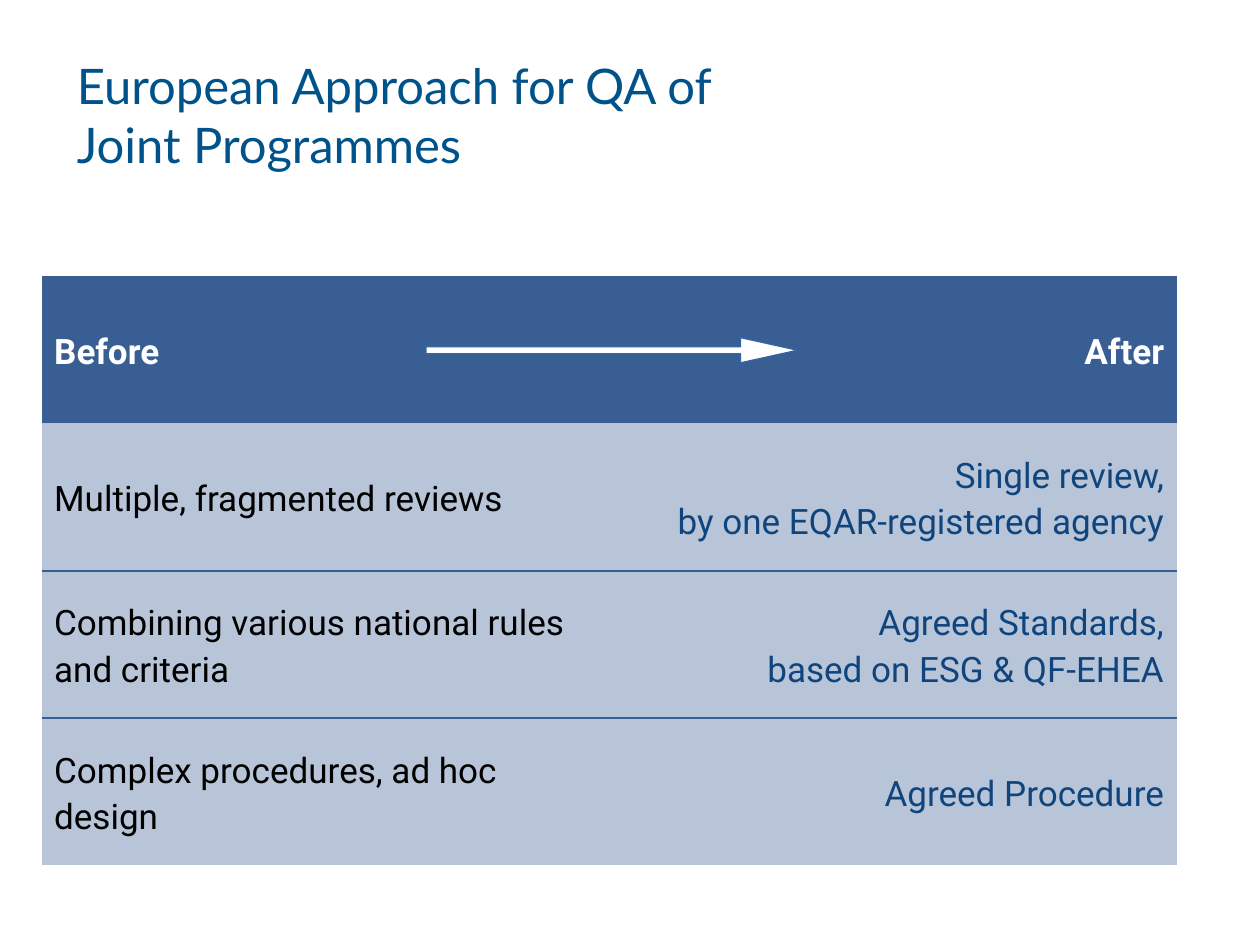
from dataclasses import dataclass
from lxml.etree import SubElement
from pptx import Presentation
from pptx.dml.color import RGBColor
from pptx.enum.shapes import MSO_SHAPE
from pptx.enum.text import MSO_ANCHOR, MSO_AUTO_SIZE, PP_ALIGN
from pptx.oxml import parse_xml
from pptx.oxml.ns import nsdecls, qn
from pptx.util import Inches, Pt


@dataclass(frozen=True)
class Theme:
    title: str = "00538A"
    head: str = "395E93"
    body: str = "B8C5D9"
    white: str = "FFFFFF"
    black: str = "000000"
    after: str = "10447D"
    edge: str = "3465A4"
    title_font: str = "Lato"
    font: str = "Roboto"
    title_size: float = 28
    size: float = 20
    rule: float = 1.13


@dataclass(frozen=True)
class Row:
    before: str
    after: str
    head: bool = False


THEME = Theme()
PLAIN_STYLE = "{2D5ABB26-0587-4C30-8999-92F81FD0307C}"
WIDTHS = (4.52, 4.49)
HEIGHT = 1.17
ROWS = (
    Row("Before", "After", head=True),
    Row("Multiple, fragmented reviews",
        "Single review,\vby one EQAR-registered agency"),
    Row("Combining various national rules and criteria",
        "Agreed Standards,\vbased on ESG & QF-EHEA"),
    Row("Complex procedures, ad hoc design", "Agreed Procedure"),
)


def style(para, color: str, **form) -> None:
    for name, value in form.items():
        setattr(para.font, name, value)
    para.font.color.rgb = RGBColor.from_string(color)


def paint(fill, color: str) -> None:
    fill.solid()
    fill.fore_color.rgb = RGBColor.from_string(color)


def add_rule(cell, side: str) -> None:
    """Draw a border on the top (lnT) or bottom (lnB) of a cell."""
    props = cell._tc.get_or_add_tcPr()
    line = parse_xml(f'<a:{side} {nsdecls("a")} w="{Pt(THEME.rule)}"/>')
    fill = SubElement(line, qn("a:solidFill"))
    SubElement(fill, qn("a:srgbClr"), val=THEME.head)
    props.insert(0, line)


def fill_cell(cell, text: str, color: str, align, head: bool) -> None:
    paint(cell.fill, THEME.head if head else THEME.body)
    cell.vertical_anchor = MSO_ANCHOR.MIDDLE
    cell.margin_left = cell.margin_right = Inches(0.1)
    para = cell.text_frame.paragraphs[0]
    para.text = text
    para.alignment = align
    para.line_spacing = 1.13
    style(para, color, name=THEME.font, size=Pt(THEME.size), bold=head)


def add_title(slide) -> None:
    title = slide.shapes.title
    title.left, title.top = Inches(0.51), Inches(0.06)
    title.width, title.height = Inches(5.83), Inches(1.7)
    frame = title.text_frame
    frame.text = "European Approach for QA of Joint Programmes"
    form = {"word_wrap": True, "auto_size": MSO_AUTO_SIZE.NONE,
            "vertical_anchor": MSO_ANCHOR.MIDDLE}
    for name, value in form.items():
        setattr(frame, name, value)
    para = frame.paragraphs[0]
    para.alignment = PP_ALIGN.LEFT
    style(para, THEME.title, name=THEME.title_font,
          size=Pt(THEME.title_size))


def add_grid(slide) -> None:
    table = slide.shapes.add_table(
        len(ROWS), len(WIDTHS), Inches(0.33), Inches(2.19),
        Inches(sum(WIDTHS)), Inches(HEIGHT * len(ROWS))).table
    table.horz_banding = False
    table._tbl.tblPr.find(qn("a:tableStyleId")).text = PLAIN_STYLE
    for col, width in zip(table.columns, WIDTHS):
        col.width = Inches(width)
    for i, row in enumerate(ROWS):
        table.rows[i].height = Inches(HEIGHT)
        sides = (
            (row.before, THEME.black, PP_ALIGN.LEFT),
            (row.after, THEME.after, PP_ALIGN.RIGHT),
        )
        for cell, (text, color, align) in zip(table.rows[i].cells, sides):
            fill_cell(cell, text, THEME.white if row.head else color,
                      align, row.head)
            # Rules run only between body rows
            if 0 < i < len(ROWS) - 1:
                add_rule(cell, "lnB")
            if i > 1:
                add_rule(cell, "lnT")


def add_arrow(slide) -> None:
    arrow = slide.shapes.add_shape(
        MSO_SHAPE.RIGHT_ARROW, Inches(3.38), Inches(2.68),
        Inches(2.95), Inches(0.2))
    arrow.adjustments[0], arrow.adjustments[1] = 0.28, 2.26
    arrow.shadow.inherit = False
    paint(arrow.fill, THEME.white)
    paint(arrow.line.fill, THEME.edge)
    arrow.line.width = Pt(0.75)


def main() -> None:
    deck = Presentation()
    deck.slide_width, deck.slide_height = Inches(10), Inches(7.5)
    slide = deck.slides.add_slide(deck.slide_layouts[5])
    # Title, comparison table, then the arrow over its header
    add_title(slide)
    add_grid(slide)
    add_arrow(slide)
    deck.save("out.pptx")


if __name__ == "__main__":
    main()
